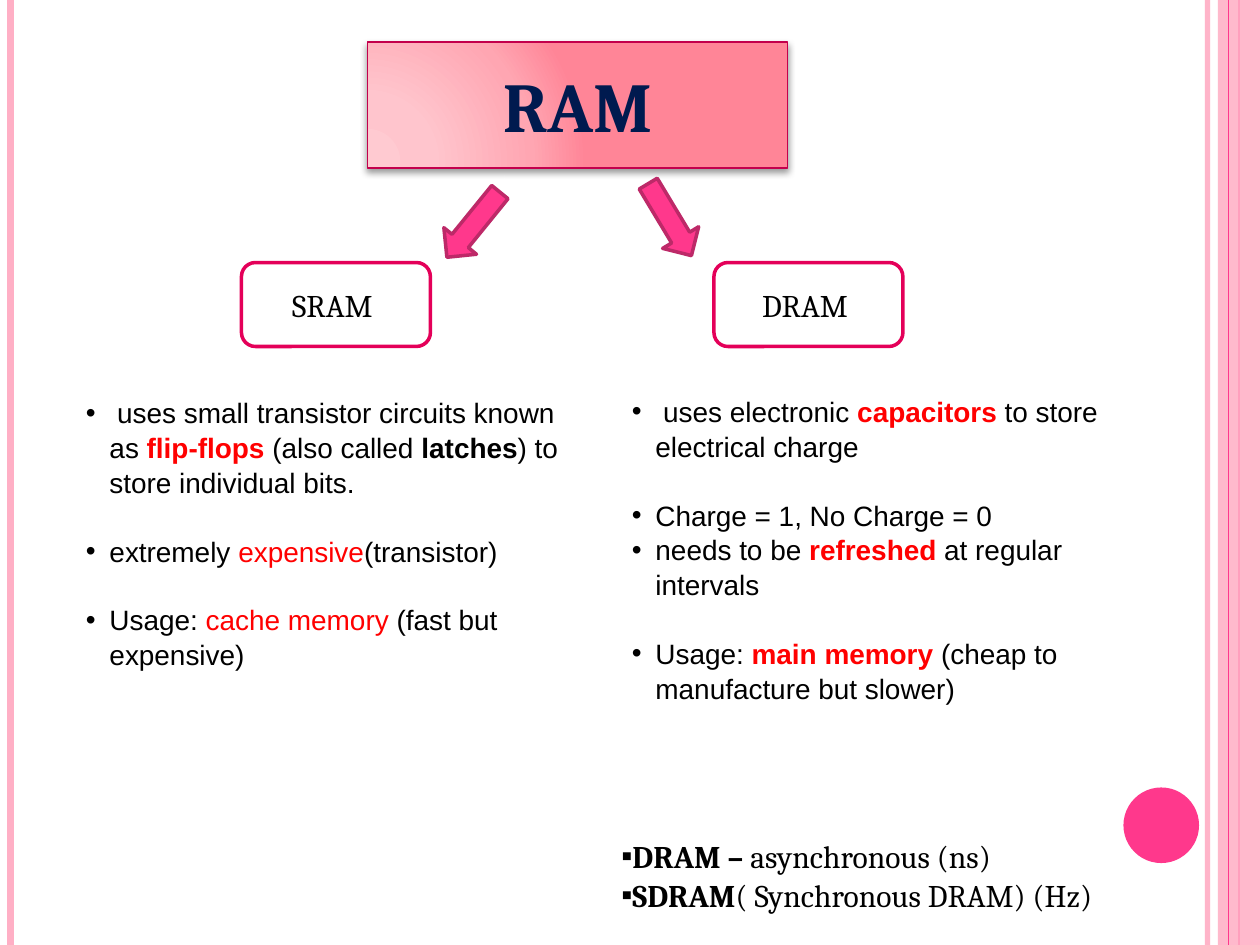
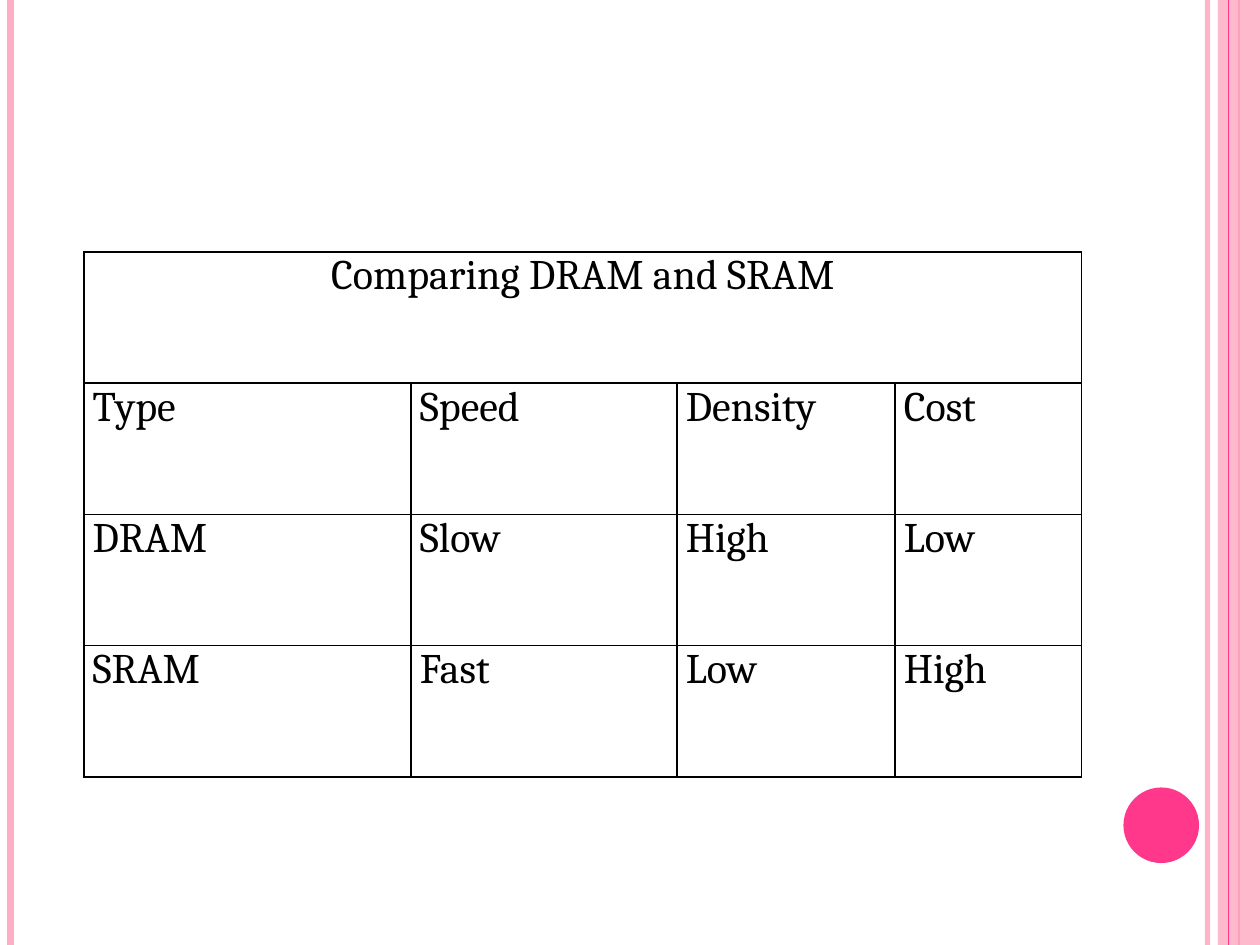
from dataclasses import dataclass

from lxml import etree
from pptx import Presentation
from pptx import util as u
from pptx.dml.color import RGBColor
from pptx.enum import shapes, text
from pptx.oxml import parse_xml
from pptx.oxml.ns import nsdecls, qn

WIDTH, HEIGHT = 720, 540
PINK, PALE_PINK, DEEP_PINK = "FF388C", "FFAFC5", "BD2968"
CRIMSON, DARK_CRIMSON, NAVY = "E40059", "C3004C", "001A4F"
BLACK, WHITE, RED = "000000", "FFFFFF", "FF0000"
SERIF, SANS = "Cambria", "Arial"
BLANK_LINE = 19.2
Kind = shapes.MSO_SHAPE
Align = text.PP_ALIGN


@dataclass(frozen=True)
class Box:
    left: float
    top: float
    width: float
    height: float

    def lengths(self) -> tuple:
        return tuple(u.Pt(v) for v in (self.left, self.top, self.width, self.height))


@dataclass(frozen=True)
class Stripe:
    x: float
    color: str
    weight: float
    opacity: int = 100


@dataclass(frozen=True)
class Run:
    text: str
    color: str = BLACK
    bold: bool = False


@dataclass(frozen=True)
class Bullet:
    runs: tuple
    gap: float = 0


@dataclass(frozen=True)
class Memory:
    name: str
    name_left: float
    arrow: Box
    arrow_angle: float
    notes: Box
    bullets: tuple


STRIPES_BEHIND = (
    Stripe(690, PALE_PINK, 3, 93),
    Stripe(6, PALE_PINK, 4.5),
    Stripe(708, PINK, 1.5),
)
STRIPE_IN_FRONT = Stripe(702, PINK, 0.75)

MEMORIES = (
    Memory("SRAM ", 138, Box(258.5, 104.4, 24, 48), 39.1, Box(42, 222, 294, 163), (
        Bullet((Run(" uses small transistor circuits known as "), Run("flip-flops", RED, True),
                Run(" (also called "), Run("latches", bold=True),
                Run(") to store individual bits."))),
        Bullet((Run("extremely "), Run("expensive", RED), Run("(transistor)")), BLANK_LINE),
        Bullet((Run("Usage: "), Run("cache memory ", RED), Run("(fast but expensive)")),
               BLANK_LINE),
    )),
    Memory("DRAM ", 408, Box(370.8, 101.5, 24, 48), 329, Box(354, 221.2, 318, 181), (
        Bullet((Run(" uses electronic "), Run("capacitors ", RED, True),
                Run("to store electrical charge"))),
        Bullet((Run("Charge = 1, No Charge = 0"),), BLANK_LINE),
        Bullet((Run("needs to be "), Run("refreshed", RED, True),
                Run(" at regular intervals"))),
        Bullet((Run("Usage: "), Run("main memory ", RED, True),
                Run("(cheap to manufacture but slower)")), BLANK_LINE),
    )),
)

CLOCKING = (
    (Run("DRAM – ", bold=True), Run("asynchronous (ns)")),
    (Run("SDRAM", bold=True), Run("( Synchronous DRAM) (Hz)")),
)

COMPARISON_TITLE = "Comparing DRAM and SRAM"
COMPARISON = (
    ("Type", "Speed", "Density", "Cost"),
    ("DRAM", "Slow", "High", "Low"),
    ("SRAM", "Fast", "Low", "High"),
)
COLUMN_WIDTHS = (187, 152, 124.5, 106.5)
ROW_HEIGHT = 75


def rgb(color: str) -> RGBColor:
    return RGBColor.from_string(color)


def set_opacity(color_parent, opacity: int) -> None:
    """Give the solid fill inside an element an opacity in percent."""
    color = next(color_parent.iter(qn("a:srgbClr")))
    etree.SubElement(color, qn("a:alpha")).set("val", str(opacity * 1000))


def write_paragraph(frame, *runs: Run, size: float, font: str = SERIF,
                    align=Align.LEFT, bullet: str = "", indent: float = 0,
                    gap: float = 0, spacing: float = 1.0) -> None:
    """Fill the frame's first paragraph if it is empty, else add another."""
    first = frame.paragraphs[0]
    paragraph = frame.add_paragraph() if first.runs else first
    paragraph.alignment = align
    paragraph.space_before = u.Pt(gap)
    paragraph.line_spacing = spacing
    for part in runs:
        run = paragraph.add_run()
        run.text = part.text
        run.font.name = font
        run.font.size = u.Pt(size)
        run.font.bold = part.bold
        run.font.color.rgb = rgb(part.color)
    if bullet:
        properties = paragraph._p.get_or_add_pPr()
        properties.set("marL", str(u.Pt(indent)))
        properties.set("indent", str(-u.Pt(indent)))
        etree.SubElement(properties, qn("a:buFont")).set("typeface", SANS)
        etree.SubElement(properties, qn("a:buChar")).set("char", bullet)


def add_shape(slide, kind, box: Box, fill: str, line: str = "", weight: float = 2):
    shape = slide.shapes.add_shape(kind, *box.lengths())
    shape.shadow.inherit = False
    shape.fill.solid()
    shape.fill.fore_color.rgb = rgb(fill)
    if line:
        shape.line.color.rgb = rgb(line)
        shape.line.width = u.Pt(weight)
    else:
        shape.line.fill.background()
    shape.text_frame.vertical_anchor = text.MSO_ANCHOR.MIDDLE
    return shape


def add_text_box(slide, box: Box):
    frame = slide.shapes.add_textbox(*box.lengths()).text_frame
    frame.word_wrap = True
    return frame


def add_stripe(slide, stripe: Stripe) -> None:
    x = u.Pt(stripe.x)
    connector = slide.shapes.add_connector(
        shapes.MSO_CONNECTOR.STRAIGHT, x, 0, x, u.Pt(HEIGHT))
    connector.line.color.rgb = rgb(stripe.color)
    connector.line.width = u.Pt(stripe.weight)
    properties = connector.element.spPr
    if stripe.opacity < 100:
        set_opacity(properties, stripe.opacity)
    etree.SubElement(properties, qn("a:effectLst"))


def add_themed_slide(presentation):
    """Add a blank slide with the pink side bands and the corner disc."""
    slide = presentation.slides.add_slide(presentation.slide_layouts[6])
    slide.background.fill.solid()
    slide.background.fill.fore_color.rgb = rgb(WHITE)
    for stripe in STRIPES_BEHIND:
        add_stripe(slide, stripe)
    band = add_shape(slide, Kind.RECTANGLE, Box(696, 0, 24, HEIGHT), PALE_PINK)
    set_opacity(band.element.spPr, 87)
    add_stripe(slide, STRIPE_IN_FRONT)
    add_shape(slide, Kind.OVAL, Box(642, 450, 43.2, 43.2), PINK)
    return slide


def apply_glow_gradient(shape) -> None:
    """Replace the solid fill by a circular gradient and add a soft shadow."""
    stops = ((0, "FFCAD1"), (30, "FFC5CD"), (75, "FFA6B2"), (100, "FF8597"))
    stop_list = "".join(
        f'<a:gs pos="{place * 1000}"><a:srgbClr val="{color}"/></a:gs>'
        for place, color in stops)
    gradient = parse_xml(
        f'<a:gradFill {nsdecls("a")} rotWithShape="1"><a:gsLst>{stop_list}</a:gsLst>'
        '<a:path path="circle"><a:fillToRect l="5000" t="100000" r="120000" b="10000"/>'
        '</a:path></a:gradFill>')
    shadow = parse_xml(
        f'<a:outerShdw {nsdecls("a")} blurRad="{u.Pt(4)}" dist="{u.Pt(2)}" dir="5400000" '
        f'rotWithShape="0"><a:srgbClr val="{BLACK}"><a:alpha val="40000"/></a:srgbClr>'
        '</a:outerShdw>')
    properties = shape.element.spPr
    properties.replace(properties.find(qn("a:solidFill")), gradient)
    properties.find(qn("a:effectLst")).append(shadow)


def add_memory(slide, memory: Memory) -> None:
    arrow = add_shape(slide, Kind.DOWN_ARROW, memory.arrow, PINK, DEEP_PINK)
    arrow.rotation = memory.arrow_angle
    name = add_shape(slide, Kind.FLOWCHART_ALTERNATE_PROCESS,
                     Box(memory.name_left, 150, 108, 48), WHITE, CRIMSON)
    write_paragraph(name.text_frame, Run(memory.name), size=18, align=Align.CENTER)
    notes = add_text_box(slide, memory.notes)
    for bullet in memory.bullets:
        write_paragraph(notes, *bullet.runs, size=16, font=SANS, bullet="•",
                        indent=13.5, gap=bullet.gap, spacing=1.04)


def build_ram_types(presentation) -> None:
    slide = add_themed_slide(presentation)
    title = add_shape(slide, Kind.FLOWCHART_PROCESS, Box(210, 24, 240, 72),
                      PALE_PINK, DARK_CRIMSON, 1)
    apply_glow_gradient(title)
    write_paragraph(title.text_frame, Run("RAM", NAVY, True), size=40, align=Align.CENTER)
    for memory in MEMORIES:
        add_memory(slide, memory)
    clocking = add_text_box(slide, Box(348, 474, 330, 51))
    for runs in CLOCKING:
        write_paragraph(clocking, *runs, size=18, bullet="▪", spacing=1.03)


def format_cell(cell) -> None:
    """Clear the fill, set the margins and draw a thin black border."""
    cell.margin_left = cell.margin_right = u.Pt(5)
    cell.margin_top = cell.margin_bottom = 0
    properties = cell._tc.get_or_add_tcPr()
    for side in ("lnL", "lnR", "lnT", "lnB"):
        properties.append(parse_xml(
            f'<a:{side} {nsdecls("a")} w="{u.Pt(1)}"><a:solidFill>'
            f'<a:srgbClr val="{BLACK}"/></a:solidFill></a:{side}>'))
    cell.fill.background()


def build_comparison(presentation) -> None:
    slide = add_themed_slide(presentation)
    row_count = len(COMPARISON) + 1
    box = Box(48, 144, sum(COLUMN_WIDTHS), ROW_HEIGHT * row_count)
    table = slide.shapes.add_table(row_count, len(COLUMN_WIDTHS), *box.lengths()).table
    table.first_row = table.horz_banding = False
    for column, width in zip(table.columns, COLUMN_WIDTHS):
        column.width = u.Pt(width)
    for row in table.rows:
        row.height = u.Pt(ROW_HEIGHT)
    for cell in table.iter_cells():
        format_cell(cell)
    heading = table.cell(0, 0)
    heading.merge(table.cell(0, len(COLUMN_WIDTHS) - 1))
    write_paragraph(heading.text_frame, Run(COMPARISON_TITLE), size=24, align=Align.CENTER)
    for row_index, values in enumerate(COMPARISON, start=1):
        for column_index, value in enumerate(values):
            write_paragraph(table.cell(row_index, column_index).text_frame, Run(value),
                            size=24, align=Align.JUSTIFY)


def main() -> None:
    presentation = Presentation()
    presentation.slide_width = u.Pt(WIDTH)
    presentation.slide_height = u.Pt(HEIGHT)
    build_ram_types(presentation)
    build_comparison(presentation)
    presentation.save("out.pptx")


if __name__ == "__main__":
    main()
